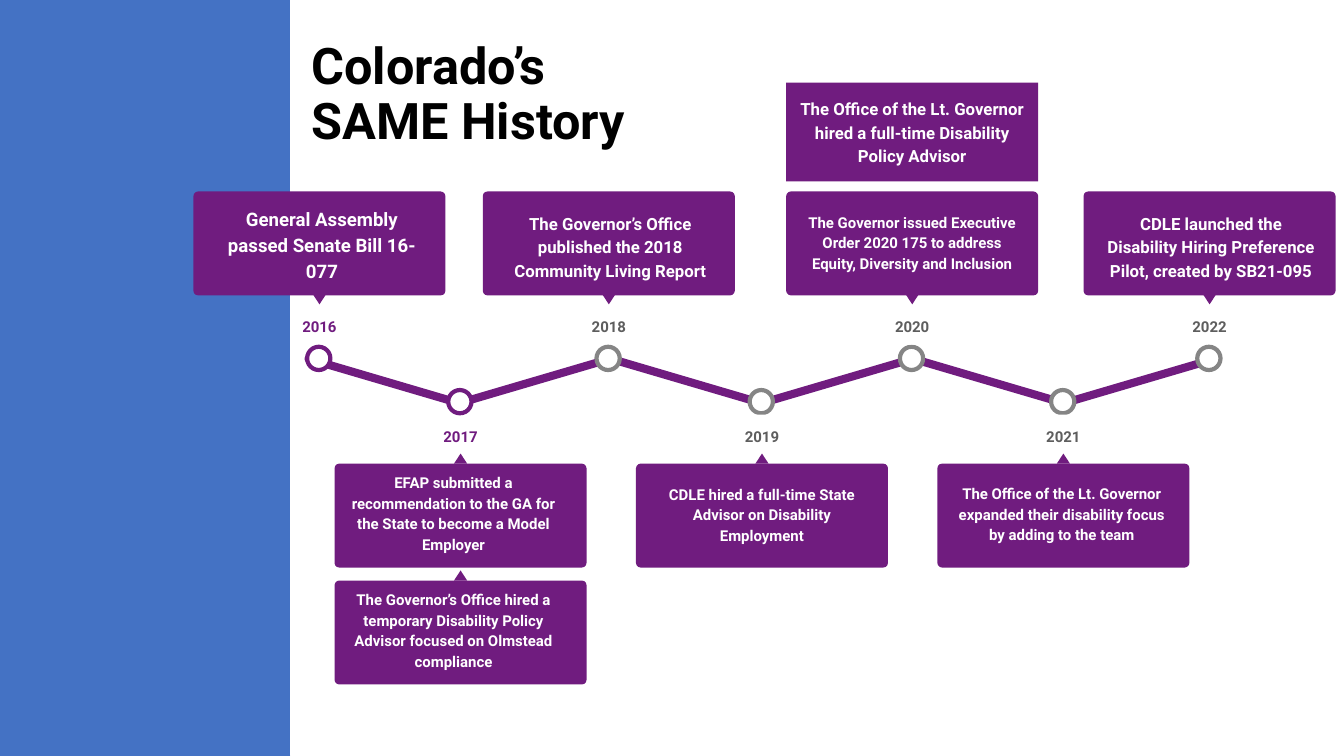
from dataclasses import dataclass

from pptx import Presentation
from pptx.dml.color import RGBColor
from pptx.enum.shapes import MSO_SHAPE
from pptx.enum.text import MSO_ANCHOR, PP_ALIGN
from pptx.util import Pt

RECT = MSO_SHAPE.RECTANGLE
ROUNDED = MSO_SHAPE.ROUNDED_RECTANGLE
OVAL = MSO_SHAPE.OVAL
TRIANGLE = MSO_SHAPE.ISOSCELES_TRIANGLE
TOP, BOTTOM = MSO_ANCHOR.TOP, MSO_ANCHOR.BOTTOM
LEFT, CENTER = PP_ALIGN.LEFT, PP_ALIGN.CENTER

FONT = "Roboto"
COLORS = {
    "blue": "4472C4",
    "purple": "701C7F",
    "ring": "858585",
    "year": "5E5E5E",
    "white": "FFFFFF",
    "black": "000000",
}

CARD_W, CARD_H = 180, 74.2
CAPTION_W, CAPTION_H = 170.6, 65.5
LABEL_W, LABEL_H = 73.4, 28.8
POINTER_W, POINTER_H = 9.4, 7.2
DOT = 16.6
BAR_W, BAR_H, BAR_STEP, BAR_TILT = 117.4, 5.8, 108, 16.4
UPPER = {"card": 136.8, "pointer": 210.2, "label": 217.4, "dot": 247.7}
LOWER = {"card": 331.2, "pointer": 324, "label": 296.2, "dot": 278.6}
SECOND_CARD_TOP = 414.7


@dataclass
class Milestone:
    year: str
    center: float
    caption: str
    size: float = 10.7
    shift: tuple = (4.7, 3.9)
    wide: bool = False
    reached: bool = False
    label_fill: bool = False


MILESTONES = [
    Milestone("2022", 864, "CDLE launched the Disability Hiring Preference Pilot, "
              "created by SB21-095", 12, (5.8, 4.3)),
    Milestone("2021", 759.6, "The Office of the Lt. Governor expanded their disability "
              "focus by adding to the team", shift=(3.6, 3.6), label_fill=True),
    Milestone("2020", 651.6, "The Governor issued Executive Order 2020 175 to address "
              "Equity, Diversity and Inclusion", label_fill=True),
    Milestone("2019", 544.3, "CDLE hired a full-time State Advisor on Disability "
              "Employment", label_fill=True),
    Milestone("2018", 434.9, "The Governor’s Office published the 2018 Community "
              "Living Report", 12, (5.8, 4.3)),
    Milestone("2017", 329, "EFAP submitted a recommendation to the GA for the State to "
              "become a Model Employer", shift=(-5, -4.3), wide=True, reached=True),
    Milestone("2016", 228.2, "General Assembly passed Senate Bill 16-077", 13.3,
              (6.5, 0), reached=True),
]


def rgb(name):
    return RGBColor.from_string(COLORS[name])


def add_block(shapes, kind, left, top, width, height, fill, line=None, weight=3):
    block = shapes.add_shape(kind, Pt(left), Pt(top), Pt(width), Pt(height))
    block.shadow.inherit = False
    block.fill.solid()
    block.fill.fore_color.rgb = rgb(fill)
    if line:
        block.line.color.rgb = rgb(line)
        block.line.width = Pt(weight)
    else:
        block.line.fill.background()
    return block


def add_text(shapes, left, top, width, height, text, size, color, align=CENTER,
             anchor=TOP, insets=(9.6, 9.6), spacing=1.15, after=21.3, fill=None):
    box = shapes.add_textbox(Pt(left), Pt(top), Pt(width), Pt(height))
    if fill:
        box.fill.solid()
        box.fill.fore_color.rgb = rgb(fill)
    frame = box.text_frame
    frame.word_wrap = True
    frame.vertical_anchor = anchor
    frame.margin_left = frame.margin_right = Pt(insets[0])
    frame.margin_top = frame.margin_bottom = Pt(insets[1])
    frame.text = text
    for paragraph in frame.paragraphs:
        paragraph.alignment = align
        paragraph.line_spacing = spacing
        paragraph.space_after = Pt(after)
        for run in paragraph.runs:
            run.font.name = FONT
            run.font.size = Pt(size)
            run.font.bold = True
            run.font.color.rgb = rgb(color)


def add_card(shapes, center, top, pointer_top, caption, size, shift, wide):
    left = center - CARD_W / 2
    card = add_block(shapes, ROUNDED, left, top, CARD_W, CARD_H, "purple")
    card.adjustments[0] = 0.045
    pointer = add_block(shapes, TRIANGLE, center - POINTER_W / 2, pointer_top,
                        POINTER_W, POINTER_H, "purple")
    if pointer_top > top:
        pointer.rotation = 180
    width, height = (CARD_W, CARD_H) if wide else (CAPTION_W, CAPTION_H)
    add_text(shapes, left + shift[0], top + shift[1], width, height,
             caption, size, "white")


def add_milestone(slide, milestone):
    shapes = slide.shapes.add_group_shape().shapes
    rows = LOWER if int(milestone.year) % 2 else UPPER
    center = milestone.center
    dot = add_block(shapes, OVAL, center - DOT / 2 - 0.5, rows["dot"], DOT, DOT,
                    "white", "purple" if milestone.reached else "ring")
    dot.rotation = 330.2
    add_text(shapes, center - LABEL_W / 2, rows["label"], LABEL_W, LABEL_H,
             milestone.year, 10.7, "purple" if milestone.reached else "year",
             fill="white" if milestone.label_fill else None)
    add_card(shapes, center, rows["card"], rows["pointer"], milestone.caption,
             milestone.size, milestone.shift, milestone.wide)


def add_zigzag(slide):
    for index in range(6):
        bar = add_block(slide.shapes, ROUNDED, 215.3 + index * BAR_STEP, 269.2,
                        BAR_W, BAR_H, "purple")
        bar.adjustments[0] = 0.5
        bar.rotation = -BAR_TILT if index % 2 else BAR_TILT


def main():
    presentation = Presentation()
    presentation.slide_width, presentation.slide_height = Pt(960), Pt(540)
    slide = presentation.slides.add_slide(presentation.slide_layouts[6])
    shapes = slide.shapes

    add_block(shapes, RECT, 0, 0, 262, 540, "blue")
    add_block(shapes, RECT, 207.4, 0, 278.6, 540, "white", "white", 0.75)
    add_zigzag(slide)
    for milestone in MILESTONES:
        add_milestone(slide, milestone)

    add_block(shapes, RECT, 561.6, 59, CARD_W, 70.6, "purple")
    add_text(shapes, 561.6, 59, CARD_W, 70.6, "The Office of the Lt. Governor hired "
             "a full-time Disability Policy Advisor", 12, "white")
    add_card(shapes.add_group_shape().shapes, 329, SECOND_CARD_TOP,
             SECOND_CARD_TOP - POINTER_H, "The Governor’s Office hired a temporary "
             "Disability Policy Advisor focused on Olmstead compliance",
             10.7, (-5, -4.3), True)
    add_text(shapes, 215.3, 23, 579.6, 87.8, "Colorado’s\nSAME History", 36, "black",
             align=LEFT, anchor=BOTTOM, insets=(7.2, 3.6), spacing=0.9, after=0)
    presentation.save("out.pptx")


if __name__ == "__main__":
    main()
